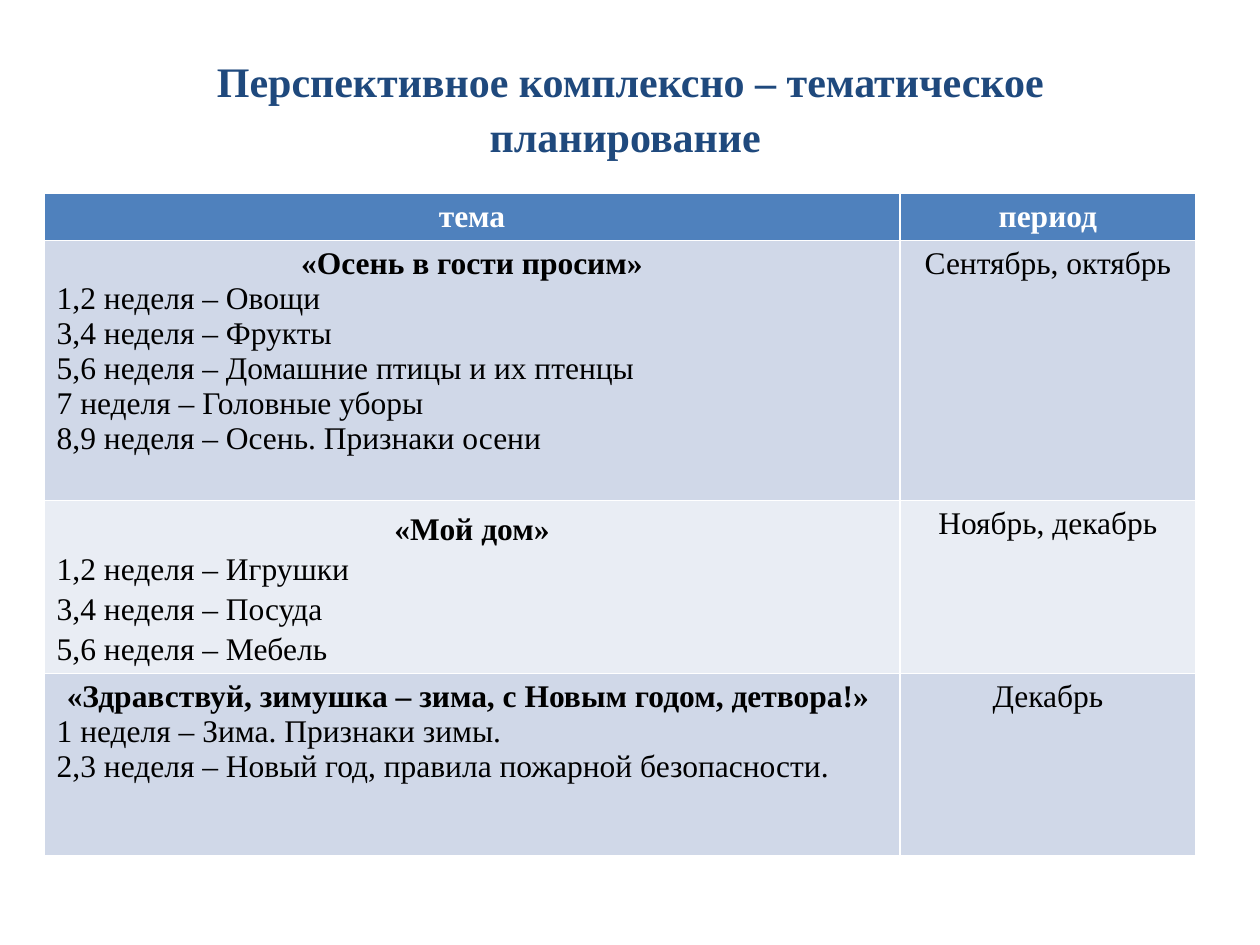
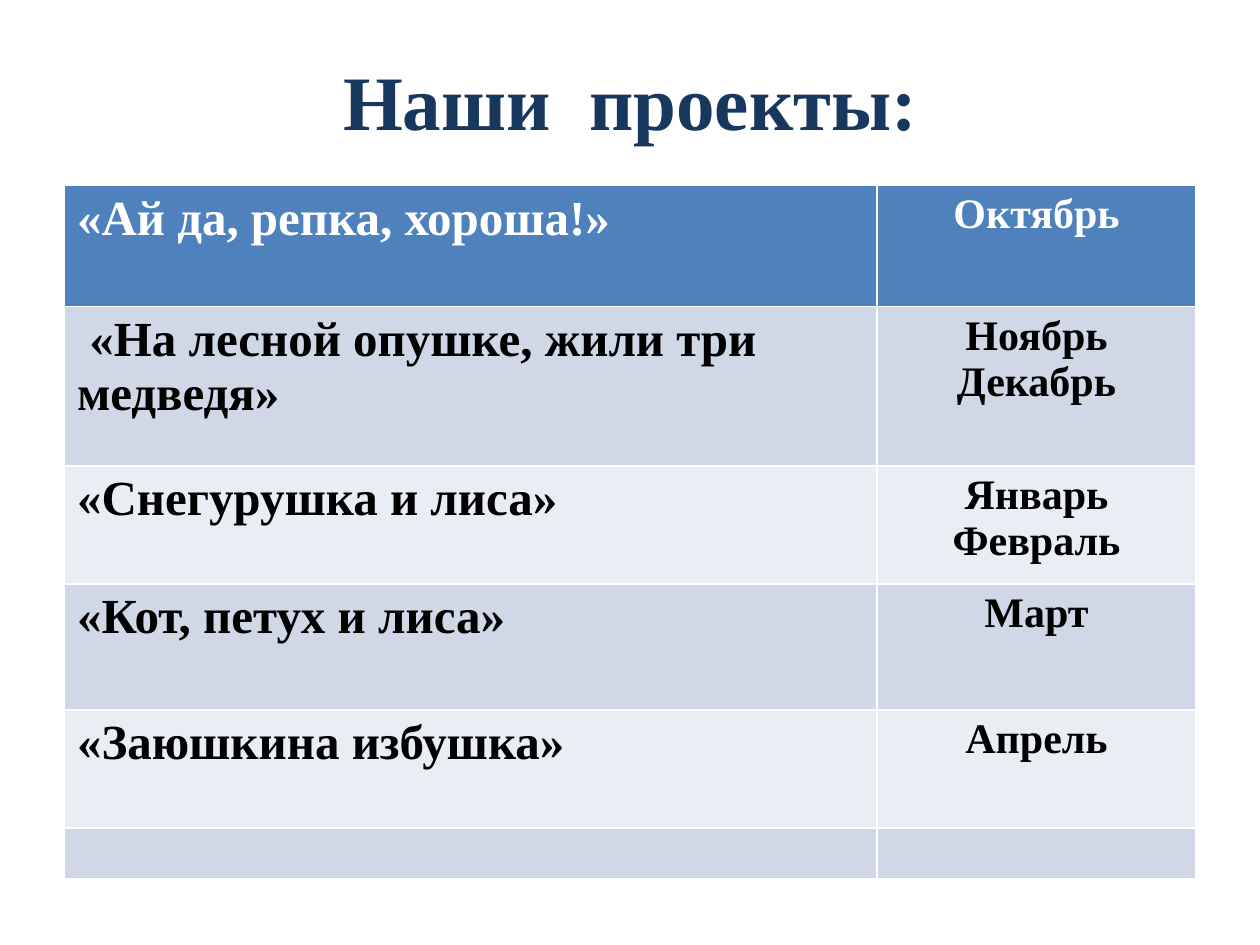
from pptx import Presentation
from pptx.dml.color import RGBColor
from pptx.enum.text import MSO_ANCHOR, PP_ALIGN
from pptx.util import Cm, Pt

FONT = "Times New Roman"
PLAN_BLUE = RGBColor(0x1F, 0x49, 0x7D)
PROJECT_BLUE = RGBColor(0x17, 0x37, 0x5E)
HEADER_BLUE = RGBColor(0x4F, 0x81, 0xBD)
BANDS = (RGBColor(0xD0, 0xD8, 0xE8), RGBColor(0xE9, 0xED, 0xF4))
WHITE = RGBColor(0xFF, 0xFF, 0xFF)
BLACK = RGBColor(0, 0, 0)

PLAN = [
    ("Сентябрь, октябрь", 1.0, "«Осень в гости просим»",
     ["1,2 неделя – Овощи",
      "3,4 неделя – Фрукты",
      "5,6 неделя – Домашние птицы и их птенцы",
      "7 неделя – Головные уборы",
      "8,9 неделя – Осень. Признаки осени"]),
    ("Ноябрь, декабрь", 1.15, "«Мой дом»",
     ["1,2 неделя – Игрушки",
      "3,4 неделя – Посуда",
      "5,6 неделя – Мебель"]),
    ("Декабрь", 1.0, "«Здравствуй, зимушка – зима, с Новым годом, детвора!» ",
     ["1 неделя – Зима. Признаки зимы.",
      "2,3 неделя – Новый год, правила пожарной безопасности."]),
]

PROJECTS = [
    ("«Ай да, репка, хороша!»", ["Октябрь"]),
    ("«На лесной опушке, жили три медведя»", ["Ноябрь", "Декабрь"]),
    ("«Снегурушка и лиса»", ["Январь", "Февраль"]),
    ("«Кот, петух и лиса»", ["Март"]),
    ("«Заюшкина избушка»", ["Апрель"]),
]


def add_run(paragraph, text, size, color, bold):
    """Append one formatted run to a paragraph."""
    run = paragraph.add_run()
    run.text = text
    run.font.name = FONT
    run.font.size = Pt(size)
    run.font.bold = bold
    run.font.color.rgb = color


def add_titled_slide(prs, title, size, color, top, height, spacing=1.0):
    """Add a title-only slide with a bold centred heading."""
    slide = prs.slides.add_slide(prs.slide_layouts[5])
    heading = slide.shapes.title
    heading.left, heading.top = Cm(1.28), Cm(top)
    heading.width, heading.height = Cm(22.86), Cm(height)
    frame = heading.text_frame
    frame.margin_left = frame.margin_right = Cm(1)
    frame.vertical_anchor = MSO_ANCHOR.MIDDLE
    line = frame.paragraphs[0]
    line.alignment = PP_ALIGN.CENTER
    line.line_spacing = spacing
    add_run(line, title, size, color, True)
    return slide


def add_banded_table(slide, left, top, column_widths, row_heights):
    """Add a table with a blue header row and alternating bands."""
    table = slide.shapes.add_table(
        len(row_heights), len(column_widths), Cm(left), Cm(top),
        Cm(sum(column_widths)), Cm(sum(row_heights))).table
    for column, width in zip(table.columns, column_widths):
        column.width = Cm(width)
    for index, (row, height) in enumerate(zip(table.rows, row_heights)):
        row.height = Cm(height)
        for cell in row.cells:
            cell.fill.solid()
            cell.fill.fore_color.rgb = BANDS[(index - 1) % 2] if index else HEADER_BLUE
    return table


def write_cell(cell, lines, size, color=BLACK, bold=False,
               align=PP_ALIGN.CENTER, spacing=None):
    """Write lines into a cell, after any text it already holds."""
    frame = cell.text_frame
    for text in lines:
        first = frame.paragraphs[0]
        line = frame.add_paragraph() if first.runs else first
        line.alignment = align
        if spacing:
            line.line_spacing = spacing
        add_run(line, text, size, color, bold)


def build_plan(prs):
    """Build the thematic planning slide."""
    slide = add_titled_slide(
        prs, "Перспективное комплексно – тематическое планирование ",
        24, PLAN_BLUE, 0.84, 2.57, 1.1)
    table = add_banded_table(slide, 0.89, 3.89, (17.25, 5.97),
                             (0.95, 5.24, 3.49, 3.68))
    for column, label in enumerate(("тема", "период")):
        write_cell(table.cell(0, column), [label], 18, WHITE, True)
    for row, (period, spacing, theme, weeks) in enumerate(PLAN, 1):
        theme_cell = table.cell(row, 0)
        write_cell(theme_cell, [theme], 18, bold=True, spacing=spacing)
        write_cell(theme_cell, weeks, 18, align=PP_ALIGN.LEFT, spacing=spacing)
        write_cell(table.cell(row, 1), [period], 18)


def build_projects(prs):
    """Build the projects slide."""
    slide = add_titled_slide(prs, "Наши  проекты:", 44, PROJECT_BLUE, 0.91, 2.21)
    table = add_banded_table(slide, 1.3, 3.73, (16.38, 6.43),
                             (2.45, 3.21, 2.38, 2.54, 2.38, 1.03))
    for row, (project, months) in enumerate(PROJECTS):
        color = BLACK if row else WHITE
        write_cell(table.cell(row, 0), [project], 28, color, True, PP_ALIGN.LEFT)
        write_cell(table.cell(row, 1), months, 24, color, True)
    forest_line = table.cell(1, 0).text_frame.paragraphs[0]
    forest_line._p.get_or_add_pPr().set("indent", str(Cm(0.25)))


def main():
    """Build and save the presentation."""
    prs = Presentation()
    prs.slide_width, prs.slide_height = Cm(25.4), Cm(19.05)
    build_plan(prs)
    build_projects(prs)
    prs.save("out.pptx")


if __name__ == "__main__":
    main()
